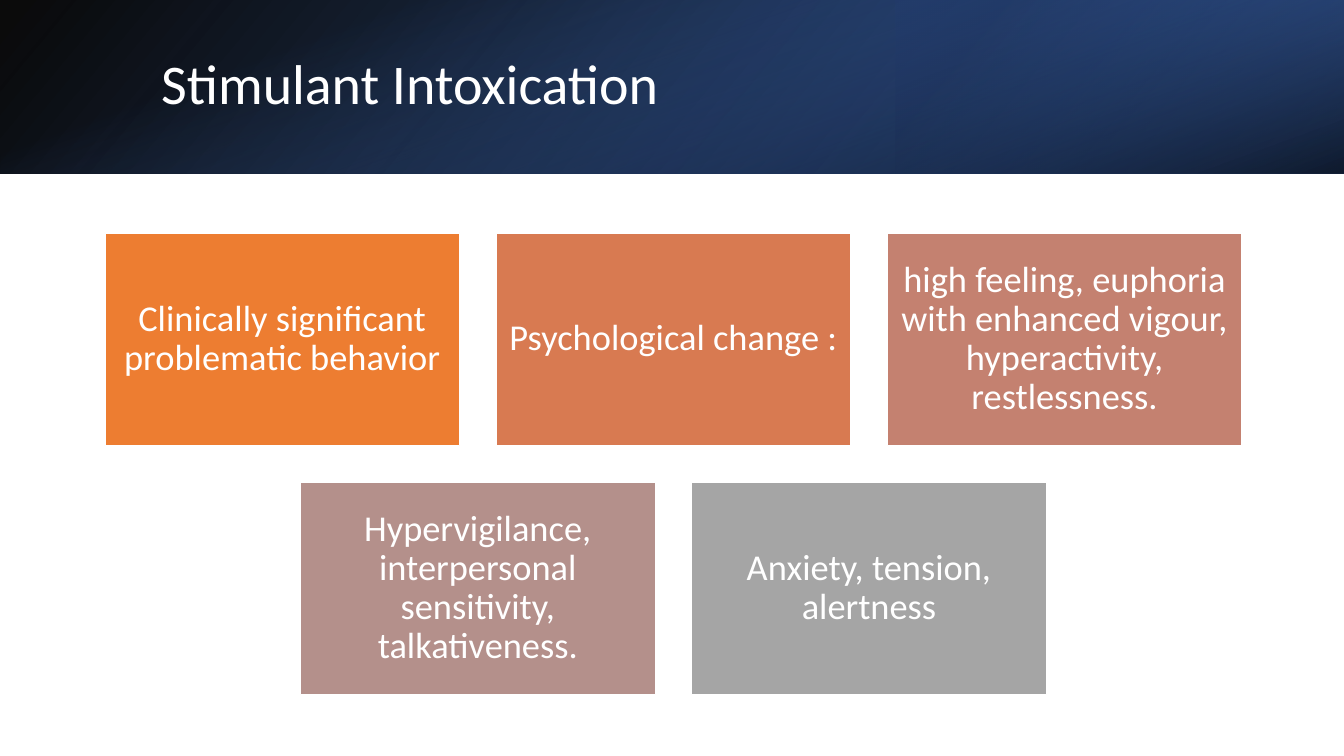
"""Build the Stimulant Intoxication slide: a gradient header over centred rows of blocks."""
import pptx
import pptx.dml.color
import pptx.enum.shapes
import pptx.enum.text
import pptx.oxml
import pptx.oxml.ns
import pptx.util

TITLE = "Stimulant Intoxication"
ROWS = [
    [("Clinically significant problematic behavior", "orange"),
     ("Psychological change :", "copper"),
     ("high feeling, euphoria with enhanced vigour, hyperactivity, restlessness.", "rose")],
    [("Hypervigilance, interpersonal sensitivity, talkativeness.", "mauve"),
     ("Anxiety, tension, alertness", "gray")],
]
COLORS = {
    "white": "FFFFFF", "black": "000000", "blue": "4472C4", "deep": "2F5597",
    "navy": "203864", "orange": "ED7D31", "copper": "D87A51", "rose": "C48170",
    "mauve": "B4908B", "gray": "A5A5A5",
}
WIDTH, HEIGHT = 13.33, 7.5
BAND = 1.72
HEADER = [
    {"area": (0, 0, WIDTH, BAND), "turn": 0, "flip": True, "angle": 140,
     "stops": [(0, "black", 96), (100, "deep", 100)]},
    {"area": (WIDTH * 2 / 3, 0, WIDTH / 3, BAND), "turn": 180, "flip": True, "angle": 320,
     "stops": [(19, "navy", 68), (100, "blue", 79)]},
    {"area": ((WIDTH - BAND) / 2, (BAND - WIDTH) / 2, BAND, WIDTH), "turn": 90,
     "flip": False, "angle": 340, "stops": [(23, "blue", 0), (99, "black", 74)]},
]
TITLE_AREA = (1.5, 0.38, 10.98, 0.96)
BLOCK_WIDTH, BLOCK_HEIGHT, GAP = 3.52, 2.11, 0.36
GRID_CENTER, GRID_TOP = 6.68, 2.31
SIDES = ("margin_left", "margin_top", "margin_right", "margin_bottom")
ALIGN = pptx.enum.text.PP_ALIGN


def color(name):
    return pptx.dml.color.RGBColor.from_string(COLORS[name])


def inches(area):
    return [pptx.util.Inches(length) for length in area]


def assign(target, values):
    for name, value in values.items():
        setattr(target, name, value)


def add_rectangle(page, area):
    box = page.shapes.add_shape(pptx.enum.shapes.MSO_SHAPE.RECTANGLE, *inches(area))
    box.shadow.inherit = False
    return box


def add_header_layer(page, layer):
    box = add_rectangle(page, layer["area"])
    box.rotation = layer["turn"]
    box.line.fill.background()
    box.fill.background()
    properties = box._element.spPr
    if layer["flip"]:
        properties.get_or_add_xfrm().set("flipH", "1")
    stops = "".join(
        f'<a:gs pos="{place * 1000}"><a:srgbClr val="{COLORS[name]}">'
        f'<a:alpha val="{opacity * 1000}"/></a:srgbClr></a:gs>'
        for place, name, opacity in layer["stops"])
    gradient = pptx.oxml.parse_xml(
        f'<a:gradFill {pptx.oxml.ns.nsdecls("a")} rotWithShape="1"><a:gsLst>{stops}</a:gsLst>'
        f'<a:lin ang="{layer["angle"] * 60000}" scaled="0"/></a:gradFill>')
    properties.replace(properties.find(pptx.oxml.ns.qn("a:noFill")), gradient)


def write(box, text, size, alignment, inset):
    frame = box.text_frame
    assign(frame, {"word_wrap": True, "vertical_anchor": pptx.enum.text.MSO_ANCHOR.MIDDLE})
    assign(frame, dict(zip(SIDES, inches(inset))))
    para = frame.paragraphs[0]
    assign(para, {"alignment": alignment, "line_spacing": 0.9})
    span = para.add_run()
    span.text = text
    assign(span.font, {"name": "Calibri", "size": pptx.util.Pt(size)})
    span.font.color.rgb = color("white")


def add_block(page, area, text, fill):
    box = add_rectangle(page, area)
    box.fill.solid()
    box.fill.fore_color.rgb = color(fill)
    box.line.color.rgb = color("white")
    box.line.width = pptx.util.Pt(1)
    write(box, text, 26, ALIGN.CENTER, [0.11] * 4)


def main():
    deck = pptx.Presentation()
    deck.slide_width, deck.slide_height = inches((WIDTH, HEIGHT))
    page = deck.slides.add_slide(deck.slide_layouts[6])
    for layer in HEADER:
        add_header_layer(page, layer)
    title = page.shapes.add_textbox(*inches(TITLE_AREA))
    write(title, TITLE, 40, ALIGN.LEFT, (0.1, 0.05, 0.1, 0.05))
    for row, blocks in enumerate(ROWS):
        left = GRID_CENTER - (len(blocks) * (BLOCK_WIDTH + GAP) - GAP) / 2
        top = GRID_TOP + row * (BLOCK_HEIGHT + GAP)
        for column, (text, fill) in enumerate(blocks):
            area = (left + column * (BLOCK_WIDTH + GAP), top, BLOCK_WIDTH, BLOCK_HEIGHT)
            add_block(page, area, text, fill)
    deck.save("out.pptx")


if __name__ == "__main__":
    main()
